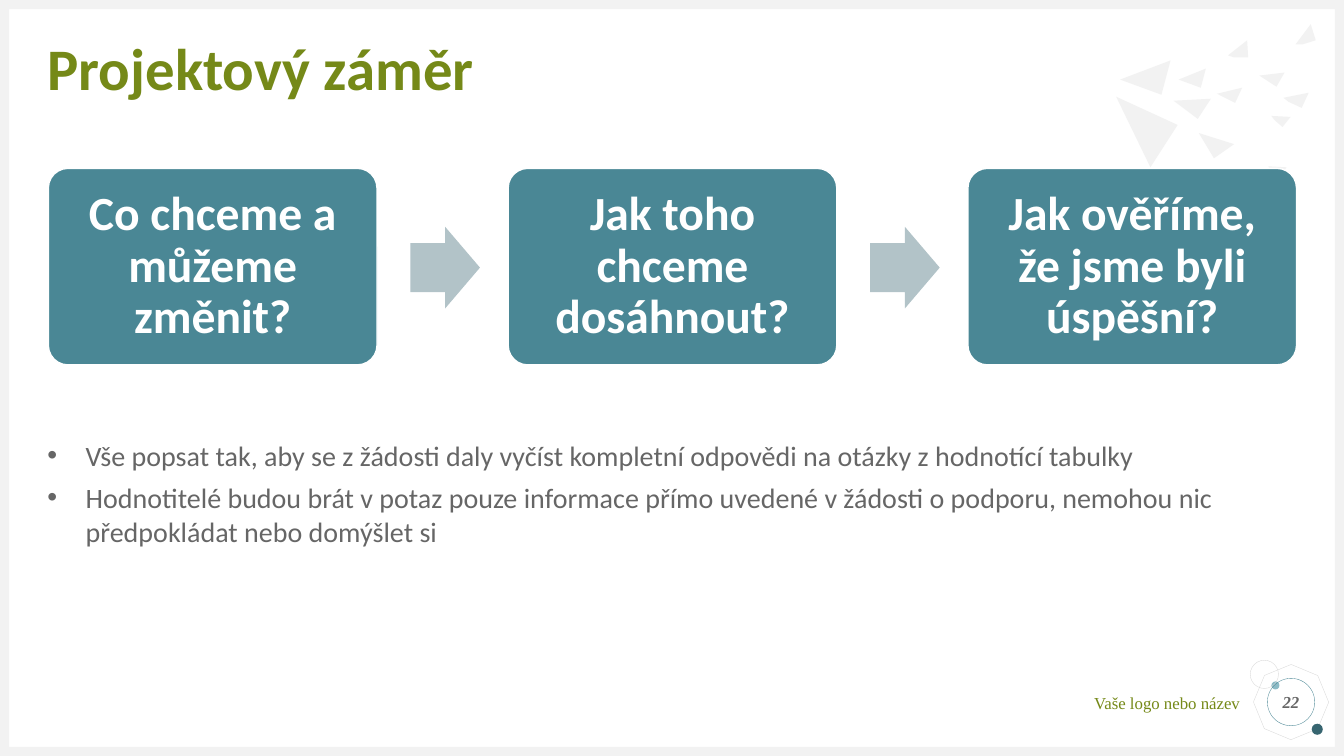
from lxml import etree
from pptx import Presentation
from pptx.dml.color import RGBColor
from pptx.enum.shapes import MSO_SHAPE as SHAPE
from pptx.enum.text import MSO_ANCHOR as ANCHOR, PP_ALIGN as ALIGN
from pptx.oxml.ns import qn
from pptx.util import Pt

PX = 9144  # EMU in one px, 100 px to the inch
WIDTH, HEIGHT, EDGE = 1333, 750, 9

WHITE = RGBColor(0xFF, 0xFF, 0xFF)
PALE = RGBColor(0xF2, 0xF2, 0xF2)
SILVER = RGBColor(0xD9, 0xD9, 0xD9)
GREY = RGBColor(0x66, 0x66, 0x66)
OLIVE = RGBColor(0x75, 0x89, 0x18)
TEAL = RGBColor(0x4A, 0x87, 0x95)
DARK_TEAL = RGBColor(0x37, 0x65, 0x70)
LIGHT_TEAL = RGBColor(0x8C, 0xBB, 0xC6)
ARROW = RGBColor(0xB2, 0xC3, 0xC8)

SHARDS = [
    [(1161, 60), (1152, 94), (1111, 79)],
    [(1201, 98), (1188, 118), (1164, 100)],
    [(1196, 68), (1191, 87), (1169, 79)],
    [(1232, 87), (1225, 102), (1207, 93)],
    [(1237, 40), (1238, 57), (1224, 57), (1218, 55)],
    [(1280, 116), (1272, 126), (1264, 119), (1261, 115)],
    [(1300, 24), (1305, 40), (1292, 44), (1285, 44)],
    [(1274, 72), (1266, 86), (1249, 75)],
    [(1298, 92), (1291, 107), (1278, 101), (1273, 97)],
    [(1168, 124), (1141, 166), (1107, 96)],
    [(1224, 143), (1204, 157), (1189, 132)],
    [(1276, 166), (1269, 176), (1260, 169), (1258, 165)],
]
QUESTIONS = [
    "Co chceme a můžeme změnit?",
    "Jak toho chceme dosáhnout?",
    "Jak ověříme, že jsme byli úspěšní?",
]
NOTES = [
    "Vše popsat tak, aby se z žádosti daly vyčíst kompletní odpovědi na otázky z hodnotící tabulky",
    "Hodnotitelé budou brát v potaz pouze informace přímo uvedené v žádosti o podporu, "
    "nemohou nic předpokládat nebo domýšlet si",
]


def paint(sp, fill=None, line=None, weight=0.25):
    sp.shadow.inherit = False
    if fill is None:
        sp.fill.background()
    else:
        sp.fill.solid()
        sp.fill.fore_color.rgb = fill
    if line is None:
        sp.line.fill.background()
    else:
        sp.line.color.rgb = line
        sp.line.width = Pt(weight)


def add_shape(s, kind, x, y, w, h, adjust=(), **style):
    sp = s.shapes.add_shape(kind, x * PX, y * PX, w * PX, h * PX)
    for i, value in enumerate(adjust):
        sp.adjustments[i] = value
    paint(sp, **style)
    return sp


def add_shard(s, points):
    builder = s.shapes.build_freeform(*points[0], scale=PX)
    builder.add_line_segments(points[1:], close=True)
    paint(builder.convert_to_shape(), fill=PALE)


def add_box(s, x, y, w, h):
    return s.shapes.add_textbox(x * PX, y * PX, w * PX, h * PX)


def add_bullet(p, indent):
    pPr = p._p.get_or_add_pPr()
    pPr.set("marL", str(indent * PX))
    pPr.set("indent", str(-indent * PX))
    etree.SubElement(pPr, qn("a:buFont")).set("typeface", "Arial")
    etree.SubElement(pPr, qn("a:buChar")).set("char", "•")


def set_text(sp, *lines, size, color, font="Calibri", bold=False, italic=False,
             align=ALIGN.LEFT, anchor=ANCHOR.TOP, margin=0, spacing=None,
             after=None, bullet=0):
    tf = sp.text_frame
    tf.word_wrap = True
    tf.vertical_anchor = anchor
    tf.margin_left = tf.margin_right = tf.margin_top = tf.margin_bottom = margin * PX
    for i, line in enumerate(lines):
        p = tf.add_paragraph() if i else tf.paragraphs[0]
        p.alignment = align
        if spacing:
            p.line_spacing = spacing
        if after:
            p.space_after = Pt(after)
        if bullet:
            add_bullet(p, bullet)
        r = p.add_run()
        r.text = line
        r.font.name, r.font.size = font, Pt(size)
        r.font.bold, r.font.italic = bold, italic
        r.font.color.rgb = color


def add_frame(s):
    for x, y, w, h in [(0, HEIGHT - EDGE, WIDTH, EDGE), (0, 0, WIDTH, EDGE),
                       (0, 0, EDGE, HEIGHT), (WIDTH - EDGE, 0, EDGE, HEIGHT)]:
        add_shape(s, SHAPE.RECTANGLE, x, y, w, h, fill=PALE)


def add_footer(s):
    octagon = add_shape(s, SHAPE.OCTAGON, 1246, 662, 69, 69, line=SILVER)
    octagon.rotation = 22.7
    add_shape(s, SHAPE.OVAL, 1261, 676, 8, 8, fill=LIGHT_TEAL)
    add_shape(s, SHAPE.OVAL, 1301, 718, 11, 11, fill=DARK_TEAL)
    add_shape(s, SHAPE.OVAL, 1240, 655, 28, 28, line=SILVER)
    set_text(add_box(s, 955, 687, 275, 20), "Vaše logo nebo název", size=12,
             color=OLIVE, font="Times New Roman", align=ALIGN.RIGHT)
    number = add_shape(s, SHAPE.OVAL, 1257, 673, 47, 47, line=TEAL)
    set_text(number, "22", size=12, color=GREY, font="Times New Roman", bold=True,
             italic=True, align=ALIGN.CENTER, anchor=ANCHOR.MIDDLE)


def add_process(s, left=48, top=167, width=326, height=195, pitch=456):
    for i, question in enumerate(QUESTIONS):
        x = left + i * pitch
        step = add_shape(s, SHAPE.ROUNDED_RECTANGLE, x, top, width, height,
                         adjust=(0.1,), fill=TEAL, line=WHITE, weight=1)
        set_text(step, question, size=34, color=WHITE, bold=True, align=ALIGN.CENTER,
                 anchor=ANCHOR.MIDDLE, margin=14, spacing=0.9)
        if i < len(QUESTIONS) - 1:
            add_shape(s, SHAPE.RIGHT_ARROW, x + width + 33, 225, 69, 81,
                      adjust=(0.6, 0.5), fill=ARROW)


def main():
    prs = Presentation()
    prs.slide_width, prs.slide_height = WIDTH * PX, HEIGHT * PX
    s = prs.slides.add_slide(prs.slide_layouts[6])

    # Background decoration
    add_frame(s)
    for points in SHARDS:
        add_shard(s, points)

    # Title, process steps and notes
    set_text(add_box(s, 47, 47, 1240, 47), "Projektový záměr", size=42, color=OLIVE,
             bold=True, anchor=ANCHOR.MIDDLE, spacing=0.9)
    add_process(s)
    set_text(add_box(s, 47, 435, 1240, 169), *NOTES, size=20, color=GREY,
             after=6, bullet=38)

    # Footer with page number
    add_footer(s)
    prs.save("out.pptx")


if __name__ == "__main__":
    main()
